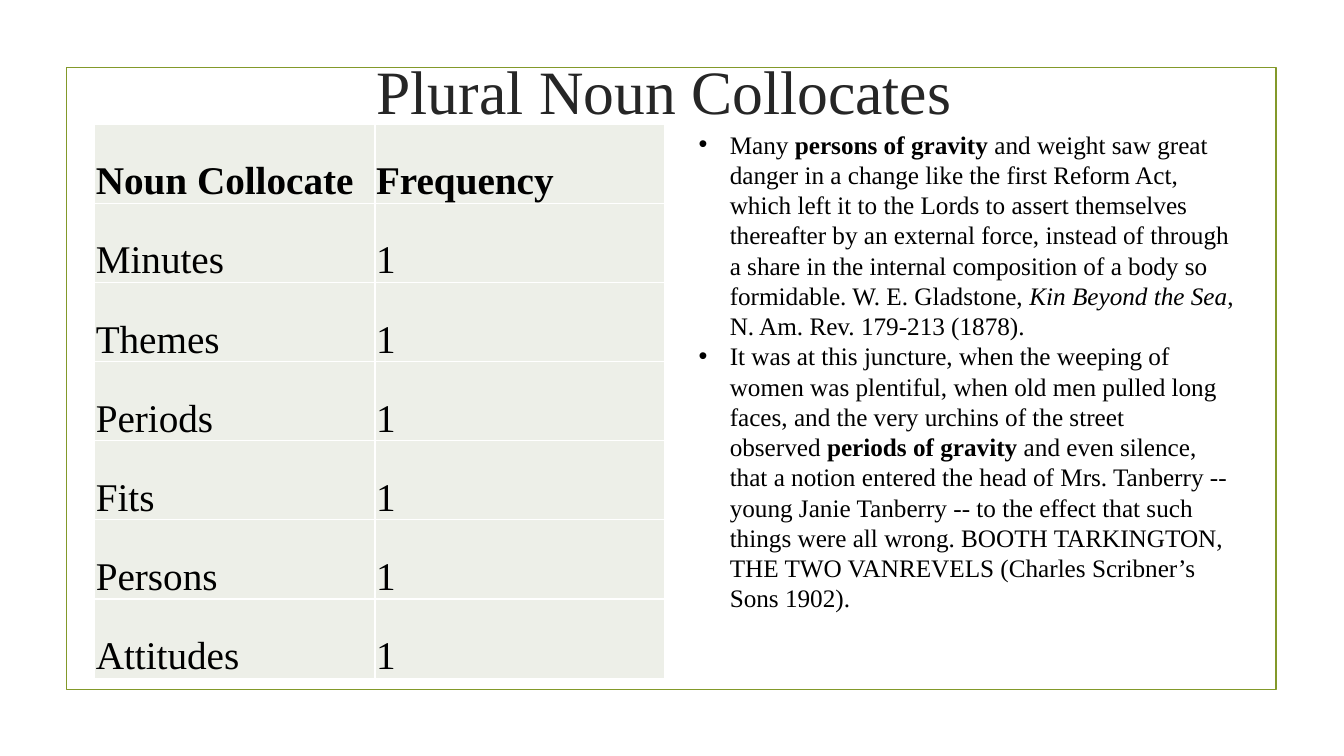
from lxml import etree
from pptx import Presentation
from pptx import util as u
from pptx.dml.color import RGBColor
from pptx.enum import shapes, text
from pptx.oxml.ns import qn

FONT = "Times New Roman"
OLIVE = RGBColor(0x83, 0x99, 0x2A)
PALE = RGBColor(0xED, 0xEF, 0xE8)
WHITE = RGBColor(0xFF, 0xFF, 0xFF)
BLACK = RGBColor(0, 0, 0)
DARK = RGBColor(0x26, 0x26, 0x26)

NOUNS = ["Minutes", "Themes", "Periods", "Fits", "Persons", "Attitudes"]
ROWS = [("Noun Collocate", "Frequency")] + [(noun, "1") for noun in NOUNS]

# Each quote is a list of (words, style) runs; "~" is a no-break space.
HARD = chr(160)
QUOTES = [
    [("Many~", ""), ("persons~of~gravity", "bold"),
     ("~and weight saw great danger in a change like the first Reform Act, "
      "which left it to the Lords to assert themselves thereafter by an "
      "external force, instead of through a share in the internal "
      "composition of a body so formidable. W. E. Gladstone, ", ""),
     ("Kin Beyond the Sea", "italic"),
     (", N. Am. Rev. 179-213 (1878).", "")],
    [("It was at this juncture, when the weeping of women was plentiful, "
      "when old men pulled long faces, and the very urchins of the street "
      "observed~", ""), ("periods~of~gravity", "bold"),
     ("~and even silence, that a notion entered the head of Mrs. Tanberry "
      "-- young Janie Tanberry -- to the effect that such things were all "
      "wrong.~BOOTH TARKINGTON, THE TWO VANREVELS (Charles Scribner’s "
      "Sons 1902).", "")],
]


def inches(*box):
    return [u.Inches(side) for side in box]


def style(font, size, color, bold=False):
    font.name, font.size, font.bold = FONT, u.Pt(size), bold
    font.color.rgb = color


def add_frame(slide, box):
    frame = slide.shapes.add_shape(shapes.MSO_SHAPE.RECTANGLE, *inches(*box))
    frame.shadow.inherit = False
    frame.fill.background()
    frame.line.color.rgb = OLIVE
    frame.line.width = u.Pt(1.25)
    slide.shapes._spTree.insert(2, frame._element)


def set_title(slide, box, words):
    title = slide.shapes.title
    title.left, title.top, title.width, title.height = inches(*box)
    frame = title.text_frame
    frame.text = words
    frame.vertical_anchor = text.MSO_ANCHOR.MIDDLE
    para = frame.paragraphs[0]
    para.alignment = text.PP_ALIGN.CENTER
    style(para.runs[0].font, 44, DARK)


def add_edges(cell):
    """Put a thin white border on all four sides, ahead of the cell fill."""
    props = cell._tc.get_or_add_tcPr()
    for spot, side in enumerate(("a:lnL", "a:lnR", "a:lnT", "a:lnB")):
        line = etree.Element(qn(side), w=str(u.Pt(1)))
        fill = etree.SubElement(line, qn("a:solidFill"))
        etree.SubElement(fill, qn("a:srgbClr"), val=str(WHITE))
        props.insert(spot, line)


def add_counts(slide, box, rows, cols):
    """Draw the frequency table with the given column widths."""
    table = slide.shapes.add_table(
        len(rows), len(cols), *inches(*box)).table
    for col, width in zip(table.columns, cols):
        col.width = u.Inches(width)
    for row in table.rows:
        row.height = u.Inches(box[3] / len(rows))
    for i, row in enumerate(rows):
        for j, words in enumerate(row):
            cell = table.cell(i, j)
            cell.text = words
            cell.vertical_anchor = text.MSO_ANCHOR.BOTTOM
            cell.margin_left = cell.margin_right = u.Inches(0.01)
            cell.margin_top, cell.margin_bottom = u.Inches(0.01), 0
            cell.fill.solid()
            cell.fill.fore_color.rgb = PALE
            add_edges(cell)
            run = cell.text_frame.paragraphs[0].runs[0]
            style(run.font, 28, BLACK, bold=i == 0)


def add_bullet(para, indent):
    props = para._p.get_or_add_pPr()
    props.set("marL", str(u.Inches(indent)))
    props.set("indent", str(-u.Inches(indent)))
    etree.SubElement(props, qn("a:buFont"), typeface="Arial")
    etree.SubElement(props, qn("a:buChar"), char="•")


def add_quotes(slide, box, quotes):
    frame = slide.shapes.add_textbox(*inches(*box)).text_frame
    frame.word_wrap = True
    for i, quote in enumerate(quotes):
        para = frame.add_paragraph() if i else frame.paragraphs[0]
        add_bullet(para, 0.31)
        for words, kind in quote:
            run = para.add_run()
            run.text = words.replace("~", HARD)
            style(run.font, 18, BLACK, bold=kind == "bold")
            run.font.italic = kind == "italic"


def main():
    deck = Presentation()
    deck.slide_width, deck.slide_height = inches(13.33, 7.5)
    slide = deck.slides.add_slide(deck.slide_layouts[5])
    top = 1.23
    add_frame(slide, (0.66, 0.67, 12, 6.17))
    set_title(slide, (1.34, 0.18, 10.5, 1.43), "Plural Noun Collocates")
    add_counts(slide, (0.94, top, 5.65, 5.5), ROWS, (2.78, 2.87))
    add_quotes(slide, (6.83, top, 5.56, 5.25), QUOTES)
    deck.save("out.pptx")


if __name__ == "__main__":
    main()
